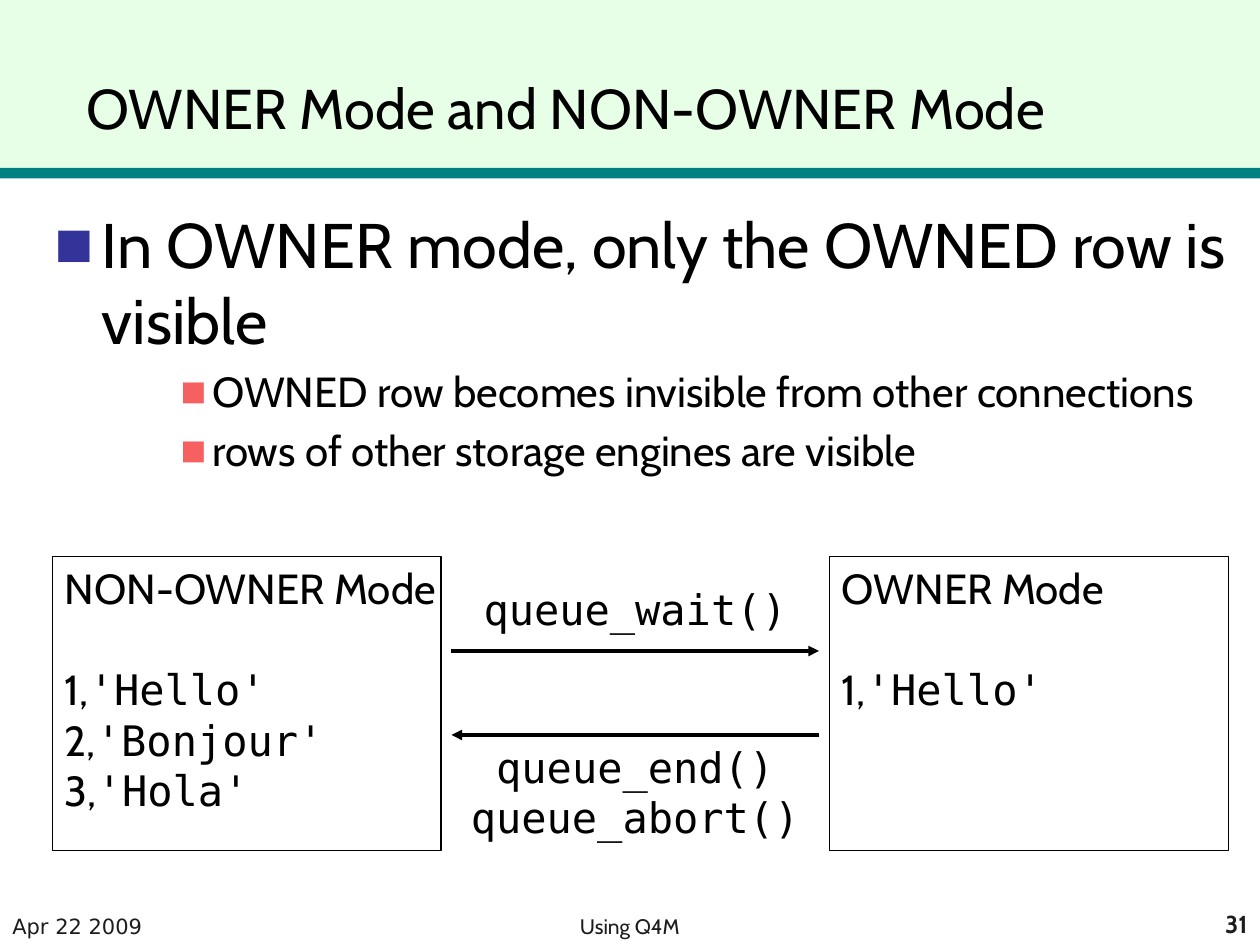
"""Build the slide that contrasts OWNER mode with NON-OWNER mode."""
from dataclasses import dataclass
from typing import Optional

from lxml import etree
from pptx import Presentation
from pptx.dml.color import RGBColor
from pptx.enum import shapes, text
from pptx.oxml import parse_xml
from pptx.oxml.ns import nsdecls, qn
from pptx.util import Pt


@dataclass(frozen=True)
class Theme:
    sans: str = "Cabin"
    mono: str = "DejaVu Sans Mono"
    plain: str = "DejaVu Sans"
    ink: str = "000000"
    footer_ink: str = "1C1C1C"
    paper: str = "FFFFFF"
    header: str = "E7FFE7"
    rule: str = "008080"
    bullet: str = "333399"
    sub_bullet: str = "F56161"
    text_shadow: str = "C0C0C0"
    title_size: float = 32
    body_size: float = 36
    label_size: float = 24
    page_size: float = 14
    footer_size: float = 12


@dataclass(frozen=True)
class Box:
    left: float
    top: float
    width: float
    height: float

    def lengths(self) -> tuple:
        return Pt(self.left), Pt(self.top), Pt(self.width), Pt(self.height)


@dataclass(frozen=True)
class Bullet:
    words: str
    size: float
    color: str
    level: int
    margin: float
    hang: float
    before: float


@dataclass(frozen=True)
class Panel:
    heading: str
    rows: tuple
    box: Box


@dataclass(frozen=True)
class Footer:
    words: str
    box: Box
    align: text.PP_ALIGN
    font: str
    size: float
    bold: bool = False


@dataclass(frozen=True)
class Call:
    lines: tuple
    box: Box
    start: float
    end: float
    arrow_y: float


THEME = Theme()
LEFT, CENTER, RIGHT = text.PP_ALIGN.LEFT, text.PP_ALIGN.CENTER, text.PP_ALIGN.RIGHT
TOP, BOTTOM = text.MSO_ANCHOR.TOP, text.MSO_ANCHOR.BOTTOM
PANEL_TOP, PANEL_HEIGHT = 318, 168
ARROW_LEFT, ARROW_RIGHT = 258, 468
ARROW_SPAN = ARROW_RIGHT - ARROW_LEFT
ROW_GAP = 29

BANDS = ((Box(0, 0, 720, 96), THEME.header), (Box(0, 96, 720, 6), THEME.rule))
BULLETS = (
    Bullet("In OWNER mode, only the OWNED row is visible",
           THEME.body_size, THEME.bullet, 0, 27, 27, 0),
    Bullet("OWNED row becomes invisible from other connections",
           THEME.label_size, THEME.sub_bullet, 2, 90, 18, 5),
    Bullet("rows of other storage engines are visible",
           THEME.label_size, THEME.sub_bullet, 2, 90, 18, 5),
)
PANELS = (
    Panel("NON-OWNER Mode", ("Hello", "Bonjour", "Hola"),
          Box(30, PANEL_TOP, 222, PANEL_HEIGHT)),
    Panel("OWNER Mode", ("Hello",), Box(474, PANEL_TOP, 228, PANEL_HEIGHT)),
)
CALLS = (
    Call(("queue_wait()",), Box(ARROW_LEFT, 330, ARROW_SPAN, 42),
         ARROW_LEFT, ARROW_RIGHT, 372),
    Call(("queue_end()", "queue_abort()"), Box(ARROW_LEFT, 420, ARROW_SPAN, 66),
         ARROW_RIGHT, ARROW_LEFT, 420),
)
FOOTERS = (
    Footer("Apr 22 2009", Box(0, 516, 150, 24), LEFT, THEME.plain, THEME.footer_size),
    Footer("Using Q4M", Box(72, 516, 576, 24), CENTER, THEME.sans, THEME.footer_size),
    Footer("31", Box(570, 516, 150, 24), RIGHT, THEME.sans, THEME.page_size, True),
)


def write(paragraph, words: str, *, size: float, font: str = THEME.sans,
          color: str = THEME.ink, bold: bool = False, align=LEFT, before: float = 0):
    paragraph.alignment = align
    paragraph.space_before = Pt(before)
    run = paragraph.add_run()
    run.text = words
    run.font.name, run.font.size, run.font.bold = font, Pt(size), bold
    run.font.color.rgb = RGBColor.from_string(color)
    return run


def prepare(shape, anchor=TOP):
    frame = shape.text_frame
    frame.word_wrap = True
    frame.auto_size = text.MSO_AUTO_SIZE.NONE
    frame.vertical_anchor = anchor
    return frame


def place(shape, box: Box) -> None:
    shape.left, shape.top, shape.width, shape.height = box.lengths()


def next_paragraph(frame, index: int):
    return frame.add_paragraph() if index else frame.paragraphs[0]


def add_rectangle(slide, box: Box, fill: str, line: Optional[str] = None):
    shape = slide.shapes.add_shape(shapes.MSO_SHAPE.RECTANGLE, *box.lengths())
    shape.shadow.inherit = False
    shape.fill.solid()
    shape.fill.fore_color.rgb = RGBColor.from_string(fill)
    if line:
        shape.line.color.rgb = RGBColor.from_string(line)
        shape.line.width = Pt(0.75)
    else:
        shape.line.fill.background()
    return shape


def add_bands(slide) -> None:
    for position, (box, color) in enumerate(BANDS, start=2):
        band = add_rectangle(slide, box, color).element
        band.getparent().insert(position, band)


def fill_title(title) -> None:
    place(title, Box(42, 0, 678, 84))
    run = write(prepare(title, BOTTOM).paragraphs[0], "OWNER Mode and NON-OWNER Mode",
                size=THEME.title_size)
    shadow = parse_xml(
        f'<a:effectLst {nsdecls("a")}><a:outerShdw dist="25400" dir="2700000">'
        f'<a:srgbClr val="{THEME.text_shadow}"/></a:outerShdw></a:effectLst>')
    run.font.fill._xPr.find(qn("a:solidFill")).addnext(shadow)


def fill_body(body) -> None:
    place(body, Box(24, 114, 696, 408))
    frame = prepare(body)
    for index, item in enumerate(BULLETS):
        paragraph = next_paragraph(frame, index)
        paragraph.level = item.level
        write(paragraph, item.words, size=item.size, before=item.before)
        properties = paragraph._p.get_or_add_pPr()
        properties.set("marL", str(Pt(item.margin)))
        properties.set("indent", str(-Pt(item.hang)))
        color = etree.SubElement(properties, qn("a:buClr"))
        etree.SubElement(color, qn("a:srgbClr"), val=item.color)
        etree.SubElement(properties, qn("a:buSzPct"), val="65000")
        etree.SubElement(properties, qn("a:buFont"), typeface=THEME.plain)
        etree.SubElement(properties, qn("a:buChar"), char="■")


def add_panel(slide, panel: Panel) -> None:
    frame = prepare(add_rectangle(slide, panel.box, THEME.paper, THEME.ink))
    frame.margin_right = 0
    write(frame.paragraphs[0], panel.heading, size=THEME.label_size)
    for number, word in enumerate(panel.rows, start=1):
        paragraph = frame.add_paragraph()
        before = ROW_GAP if number == 1 else 0
        write(paragraph, f"{number},", size=THEME.label_size, before=before)
        write(paragraph, f"'{word}'", size=THEME.label_size, font=THEME.mono, before=before)


def add_call(slide, call: Call) -> None:
    arrow = slide.shapes.add_connector(
        shapes.MSO_CONNECTOR.STRAIGHT, Pt(call.start), Pt(call.arrow_y),
        Pt(call.end), Pt(call.arrow_y))
    arrow.line.width = Pt(2)
    arrow.line.color.rgb = RGBColor.from_string(THEME.ink)
    etree.SubElement(arrow.line._get_or_add_ln(), qn("a:tailEnd"), type="triangle")
    etree.SubElement(arrow.element.spPr, qn("a:effectLst"))
    frame = prepare(slide.shapes.add_textbox(*call.box.lengths()))
    for index, line in enumerate(call.lines):
        write(next_paragraph(frame, index), line, size=THEME.label_size,
              font=THEME.mono, align=CENTER)


def add_footer(slide, footer: Footer) -> None:
    frame = prepare(slide.shapes.add_textbox(*footer.box.lengths()), BOTTOM)
    write(frame.paragraphs[0], footer.words, size=footer.size, font=footer.font,
          color=THEME.footer_ink, bold=footer.bold, align=footer.align)


def main() -> None:
    presentation = Presentation()
    presentation.slide_width, presentation.slide_height = Pt(720), Pt(540)
    slide = presentation.slides.add_slide(presentation.slide_layouts[1])
    add_bands(slide)
    fill_title(slide.shapes.title)
    fill_body(slide.placeholders[1])
    for footer in FOOTERS:
        add_footer(slide, footer)
    for panel in PANELS:
        add_panel(slide, panel)
    for call in CALLS:
        add_call(slide, call)
    presentation.save("out.pptx")


if __name__ == "__main__":
    main()
